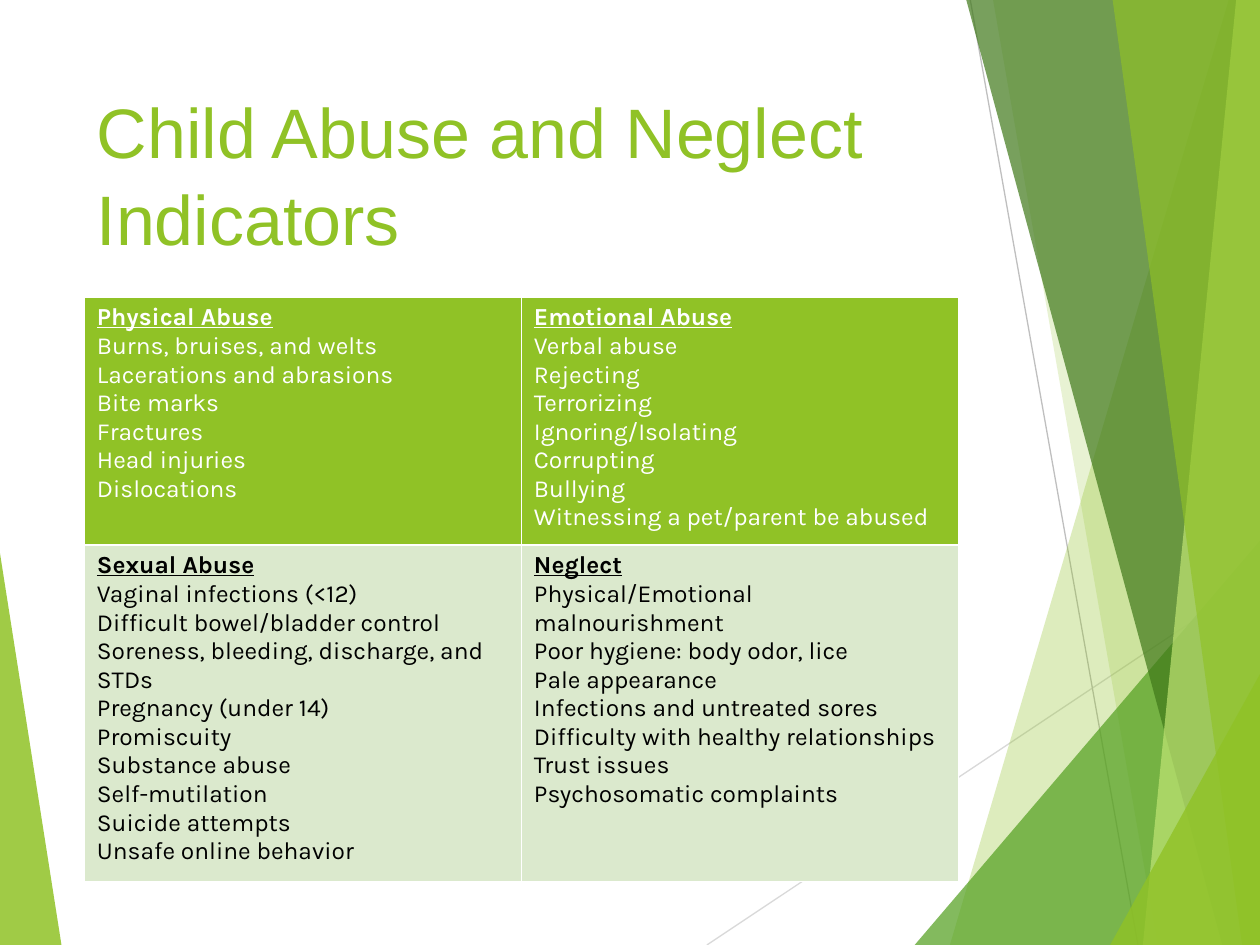
from lxml.etree import SubElement
from pptx import Presentation
from pptx.dml.color import RGBColor
from pptx.enum.shapes import MSO_CONNECTOR
from pptx.enum.text import MSO_ANCHOR, PP_ALIGN
from pptx.oxml.ns import qn
from pptx.util import Cm, Pt

COLORS = {
    "lime": "90C226", "green": "54A021", "forest": "3F7819", "pale": "C0E474",
    "mint": "DBE9CD", "silver": "D9D9D9", "gray": "BFBFBF",
    "white": "FFFFFF", "black": "000000",
}
WIDTH, HEIGHT = 25.4, 19.05

TITLE = ["Child Abuse and Neglect ", "Indicators"]
TITLE_BOX = (1.7, 1.7, 17.63, 3.66)

# Each cell: heading, then its indicators
INDICATORS = [
    [
        ["Physical Abuse", "Burns, bruises, and welts", "Lacerations and abrasions",
         "Bite marks", "Fractures", "Head injuries", "Dislocations"],
        ["Emotional Abuse", "Verbal abuse", "Rejecting", "Terrorizing",
         "Ignoring/Isolating", "Corrupting", "Bullying",
         "Witnessing a pet/parent be abused"],
    ],
    [
        ["Sexual Abuse", "Vaginal infections (<12)", "Difficult bowel/bladder control",
         "Soreness, bleeding, discharge, and STDs", "Pregnancy (under 14)",
         "Promiscuity", "Substance abuse", "Self-mutilation", "Suicide attempts",
         "Unsafe online behavior"],
        ["Neglect", "Physical/Emotional malnourishment",
         "Poor hygiene: body odor, lice", "Pale appearance",
         "Infections and untreated sores", "Difficulty with healthy relationships",
         "Trust issues", "Psychosomatic complaints"],
    ],
]
TABLE_LEFT, TABLE_TOP, COLUMN_WIDTH = 1.7, 5.99, 8.81
ROWS = [(5.0, "lime", "white"), (6.78, "mint", "black")]  # height, fill, text

# Decoration: colour, opacity in percent, corners
LEFT_WEDGE = ("lime", 85, [(0, 11.15), (1.24, HEIGHT), (0, HEIGHT)])
RAYS = [("silver", (14.25, HEIGHT), (WIDTH, 11.62)),
        ("gray", (19.56, 0), (22.94, HEIGHT))]
# Right-hand facets: colour, opacity, left edge (closed along the page's right edge)
FACETS = [
    ("lime", 30, [(24.77, 0), (19.15, HEIGHT)]),
    ("lime", 20, [(20.02, 0), (23.34, HEIGHT)]),
    ("green", 72, [(WIDTH, 10.9), (18.44, HEIGHT)]),
    ("forest", 70, [(19.48, 0), (24.64, HEIGHT)]),
    ("pale", 70, [(24.92, 0), (23.04, HEIGHT)]),
    ("lime", 65, [(22.43, 0), (25.04, HEIGHT)]),
    ("lime", 80, [(WIDTH, 13.59), (22.38, HEIGHT)]),
]


def rgb(name):
    return RGBColor.from_string(COLORS[name])


def add_span(para, text, font, size, color, strong=False):
    span = para.add_run()
    span.text = text
    span.font.name, span.font.size = font, Pt(size)
    span.font.color.rgb = rgb(color)
    span.font.bold = span.font.underline = strong


def add_facet(page, color, opacity, corners):
    points = [(Cm(x), Cm(y)) for x, y in corners]
    builder = page.shapes.build_freeform(*points[0])
    builder.add_line_segments(points[1:], close=True)
    facet = builder.convert_to_shape()
    facet.shadow.inherit = False
    facet.line.fill.background()
    facet.fill.solid()
    facet.fill.fore_color.rgb = rgb(color)
    tint = facet._element.spPr.find(qn("a:solidFill"))[0]
    SubElement(tint, qn("a:alpha"), val=str(opacity * 1000))


def add_ray(page, color, start, end):
    ray = page.shapes.add_connector(
        MSO_CONNECTOR.STRAIGHT, *[Cm(value) for value in start + end])
    ray.line.color.rgb = rgb(color)
    ray.line.width = Pt(0.75)
    SubElement(ray._element.spPr, qn("a:effectLst"))


def add_borders(cell):
    props = cell._tc.get_or_add_tcPr()
    for index, side in enumerate(("lnL", "lnR", "lnT", "lnB")):
        border = props.makeelement(qn(f"a:{side}"), {"w": str(Pt(1))})
        fill = SubElement(border, qn("a:solidFill"))
        SubElement(fill, qn("a:srgbClr"), val=COLORS["white"])
        props.insert(index, border)


def add_title(page):
    box = page.shapes.add_textbox(*[Cm(value) for value in TITLE_BOX])
    frame = box.text_frame
    frame.word_wrap = True
    frame.vertical_anchor = MSO_ANCHOR.BOTTOM
    para = frame.paragraphs[0]
    para.alignment = PP_ALIGN.LEFT
    para.line_spacing = 1.04
    for index, line in enumerate(TITLE):
        if index:
            para.add_line_break()
        add_span(para, line, "Arial", 40, "lime")


def add_indicator_table(page):
    total = sum(height for height, _, _ in ROWS)
    table = page.shapes.add_table(
        2, 2, Cm(TABLE_LEFT), Cm(TABLE_TOP), Cm(2 * COLUMN_WIDTH), Cm(total)).table
    table.first_row = table.horz_banding = False
    for column in table.columns:
        column.width = Cm(COLUMN_WIDTH)
    for row, (height, fill, ink), texts in zip(table.rows, ROWS, INDICATORS):
        row.height = Cm(height)
        for cell, lines in zip(row.cells, texts):
            cell.fill.solid()
            cell.fill.fore_color.rgb = rgb(fill)
            add_borders(cell)
            frame = cell.text_frame
            for index, line in enumerate(lines):
                para = frame.add_paragraph() if index else frame.paragraphs[0]
                add_span(para, line, "Karla", 14, ink, strong=index == 0)


def main():
    deck = Presentation()
    deck.slide_width, deck.slide_height = Cm(WIDTH), Cm(HEIGHT)
    page = deck.slides.add_slide(deck.slide_layouts[6])

    # Background decoration
    add_facet(page, *LEFT_WEDGE)
    for ray in RAYS:
        add_ray(page, *ray)
    for color, opacity, edge in FACETS:
        corners = edge + [(WIDTH, HEIGHT), (WIDTH, edge[0][1])]
        add_facet(page, color, opacity, corners)

    # Content
    add_title(page)
    add_indicator_table(page)
    deck.save("out.pptx")


if __name__ == "__main__":
    main()
